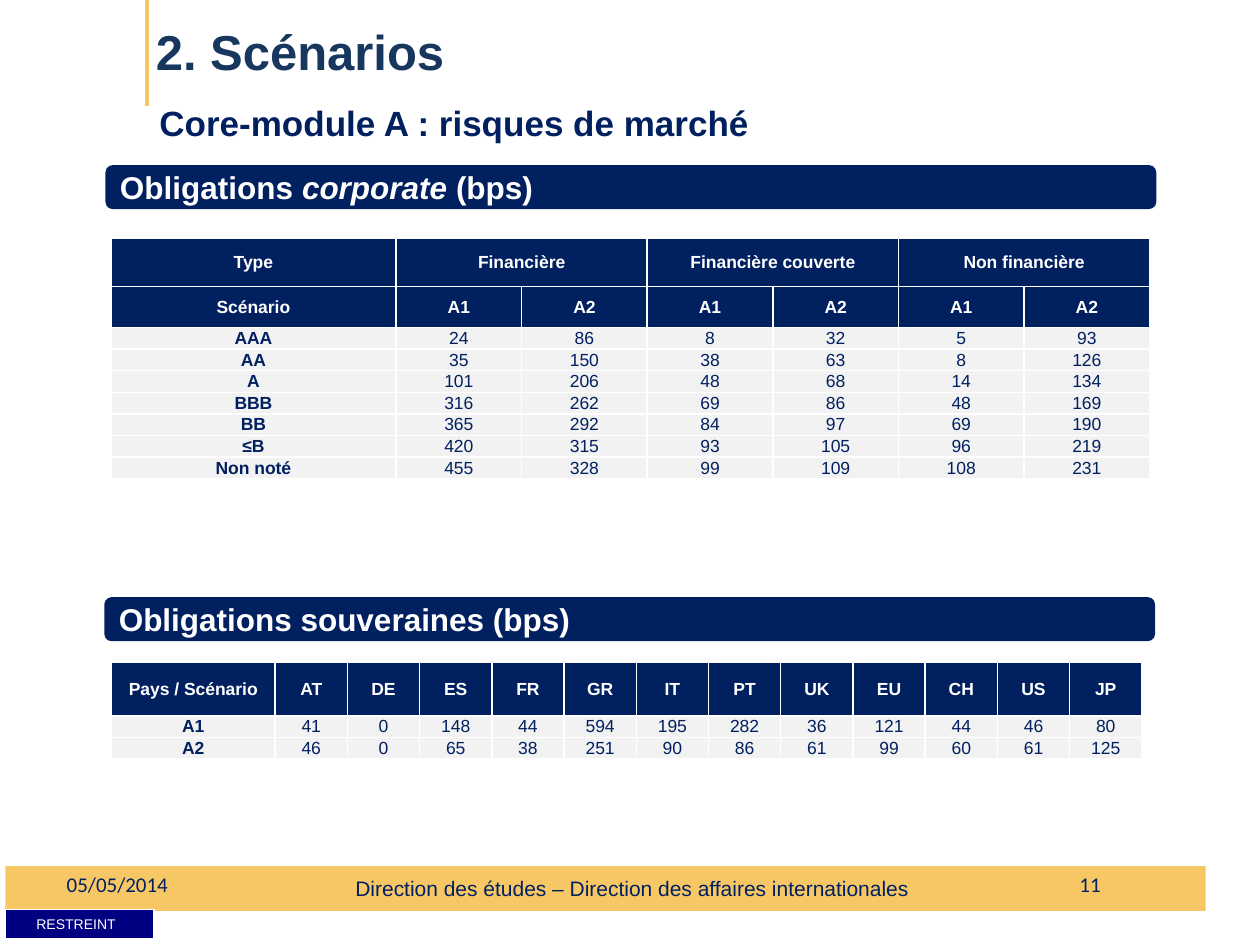
from dataclasses import dataclass

from lxml.etree import SubElement
from pptx import Presentation
from pptx.dml.color import RGBColor as RGB
from pptx.enum.shapes import MSO_CONNECTOR as Connector, MSO_SHAPE as Shape
from pptx.enum.text import MSO_ANCHOR as Anchor, PP_ALIGN as Align
from pptx.oxml.ns import qn
from pptx.util import Pt


@dataclass(frozen=True)
class Theme:
    navy: RGB = RGB(0x00, 0x20, 0x60)
    title_blue: RGB = RGB(0x17, 0x37, 0x5E)
    label_blue: RGB = RGB(0x00, 0x00, 0x80)
    gold: RGB = RGB(0xF7, 0xC7, 0x65)
    grey: RGB = RGB(0xF2, 0xF2, 0xF2)
    white: RGB = RGB(0xFF, 0xFF, 0xFF)
    font: str = "Arial"
    field_font: str = "Calibri"
    title: int = 28
    subtitle: int = 20
    heading: int = 18
    footer: int = 12
    table: int = 10
    label: int = 8


THEME = Theme()
BODY_ROW = 11.8
CORPORATE = [
    ["Type", "Financière", "", "Financière couverte", "", "Non financière", ""],
    ["Scénario"] + ["A1", "A2"] * 3,
    ["AAA", 24, 86, 8, 32, 5, 93],
    ["AA", 35, 150, 38, 63, 8, 126],
    ["A", 101, 206, 48, 68, 14, 134],
    ["BBB", 316, 262, 69, 86, 48, 169],
    ["BB", 365, 292, 84, 97, 69, 190],
    ["≤B", 420, 315, 93, 105, 96, 219],
    ["Non noté", 455, 328, 99, 109, 108, 231],
]
SOVEREIGN = [
    ["Pays / Scénario", "AT", "DE", "ES", "FR", "GR", "IT", "PT", "UK", "EU", "CH", "US", "JP"],
    ["A1", 41, 0, 148, 44, 594, 195, 282, 36, 121, 44, 46, 80],
    ["A2", 46, 0, 65, 38, 251, 90, 86, 61, 99, 60, 61, 125],
]


def points(box):
    return [Pt(length) for length in box]


def style(paragraph, size, color, bold=False, font=THEME.font, align=Align.LEFT):
    paragraph.alignment = align
    paragraph.font.name = font
    paragraph.font.size = Pt(size)
    paragraph.font.bold = bold
    paragraph.font.color.rgb = color


def add_text(slide, box, text, size, color, anchor=Anchor.MIDDLE, **options):
    frame = slide.shapes.add_textbox(*points(box)).text_frame
    frame.word_wrap = True
    frame.vertical_anchor = anchor
    frame.text = text
    style(frame.paragraphs[0], size, color, **options)


def add_block(slide, box, color, kind=Shape.RECTANGLE):
    shape = slide.shapes.add_shape(kind, *points(box))
    shape.shadow.inherit = False
    shape.fill.solid()
    shape.fill.fore_color.rgb = color
    shape.line.fill.background()
    return shape


def add_plain_table(slide, box, rows, columns):
    table = slide.shapes.add_table(rows, columns, *points(box)).table
    table.first_row = table.horz_banding = False
    return table


def fill_cell(cell, text, fill, size, color, bold=False):
    cell.fill.solid()
    cell.fill.fore_color.rgb = fill
    cell.vertical_anchor = Anchor.MIDDLE
    cell.text = text
    style(cell.text_frame.paragraphs[0], size, color, bold, align=Align.CENTER)


def add_borders(cell, color):
    properties = cell._tc.get_or_add_tcPr()
    for index, side in enumerate(("a:lnL", "a:lnR", "a:lnT", "a:lnB")):
        line = properties.makeelement(qn(side), {"w": str(Pt(1))})
        solid = SubElement(line, qn("a:solidFill"))
        SubElement(solid, qn("a:srgbClr"), val=str(color))
        properties.insert(index, line)


def add_data_table(slide, box, data, first_width, header_heights):
    left, top, width, height = box
    columns = len(data[0])
    table = add_plain_table(slide, box, len(data), columns)
    other_width = (width - first_width) / (columns - 1)
    for index, column in enumerate(table.columns):
        column.width = Pt(other_width if index else first_width)
    for row_index, values in enumerate(data):
        header = row_index < len(header_heights)
        table.rows[row_index].height = Pt(header_heights[row_index] if header else BODY_ROW)
        for column_index, value in enumerate(values):
            cell = table.cell(row_index, column_index)
            cell.margin_left = cell.margin_right = Pt(0.7)
            cell.margin_top, cell.margin_bottom = Pt(0.3), Pt(0)
            fill_cell(cell, str(value), THEME.navy if header else THEME.grey, THEME.table,
                      THEME.white if header else THEME.navy, header or column_index == 0)
            add_borders(cell, THEME.white)
    return table


def add_heading_bar(slide, box, runs):
    frame = add_block(slide, box, THEME.navy, Shape.ROUNDED_RECTANGLE).text_frame
    frame.vertical_anchor = Anchor.MIDDLE
    paragraph = frame.paragraphs[0]
    style(paragraph, THEME.heading, THEME.white, bold=True)
    for text, italic in runs:
        run = paragraph.add_run()
        run.text = text
        if italic:
            run.font.italic = True


def add_footer(slide, box):
    left, top, width, height = box
    # Gold band, stopped short by a white margin
    add_block(slide, box, THEME.gold)
    add_block(slide, (left + width - 16.5, top - 10, 20, 47.5), THEME.white)
    # Classification label
    table = add_plain_table(slide, (left, top + 24.7, 85, 16.7), 1, 1)
    cell = table.cell(0, 0)
    cell.margin_right = Pt(11.2)
    fill_cell(cell, "RESTREINT", THEME.label_blue, THEME.label, THEME.white)
    # Department, page number and date
    add_text(slide, (left + 193, top + 1.5, 340, 39.5),
             "Direction des études – Direction des affaires internationales",
             THEME.footer, THEME.navy, Anchor.TOP)
    for offset, text, align in ((465, "11", Align.RIGHT), (28, "05/05/2014", Align.LEFT)):
        add_text(slide, (left + offset, top - 4.3, 168, 28.8), text, THEME.footer,
                 THEME.navy, font=THEME.field_font, align=align)


def add_titles(slide, box):
    left, top, width, height = box
    # Vertical gold rule
    rule = slide.shapes.add_connector(Connector.STRAIGHT, *points((left + 2, 0, left + 2, 60.5)))
    rule.line.color.rgb = THEME.gold
    rule.line.width = Pt(2.75)
    SubElement(rule._element.spPr, qn("a:effectLst"))
    # Title and subtitle
    add_text(slide, (left, top, width, 62), "2. Scénarios", THEME.title,
             THEME.title_blue, bold=True)
    add_text(slide, (left + 2, top + 56.2, width - 57, 34), "Core-module A : risques de marché",
             THEME.subtitle, THEME.navy, Anchor.TOP, bold=True)


def add_corporate(slide, box):
    left, top, width, height = box
    add_heading_bar(slide, (left, top, width, 25.2),
                    [("Obligations ", False), ("corporate", True), (" (bps)", False)])
    table = add_data_table(slide, (left + 3, top + 42, width - 6.7, height - 42),
                           CORPORATE, 163, (27.3, 23.6))
    for column in (1, 3, 5):
        table.cell(0, column).merge(table.cell(0, column + 1))


def add_sovereign(slide, box):
    left, top, width, height = box
    add_heading_bar(slide, (left, top, width, 25.2), [("Obligations souveraines (bps)", False)])
    add_data_table(slide, (left + 4, top + 37.5, width - 11.4, height - 37.5),
                   SOVEREIGN, 93.6, (30.4,))


def main():
    presentation = Presentation()
    presentation.slide_width, presentation.slide_height = Pt(720), Pt(540)
    slide = presentation.slides.add_slide(presentation.slide_layouts[6])
    add_footer(slide, (3, 495, 702.5, 25.5))
    add_titles(slide, (82, -2, 629, 90))
    add_corporate(slide, (60.3, 94.3, 600.5, 175.5))
    add_sovereign(slide, (59.6, 341.2, 600.5, 91.5))
    presentation.save("out.pptx")


if __name__ == "__main__":
    main()
